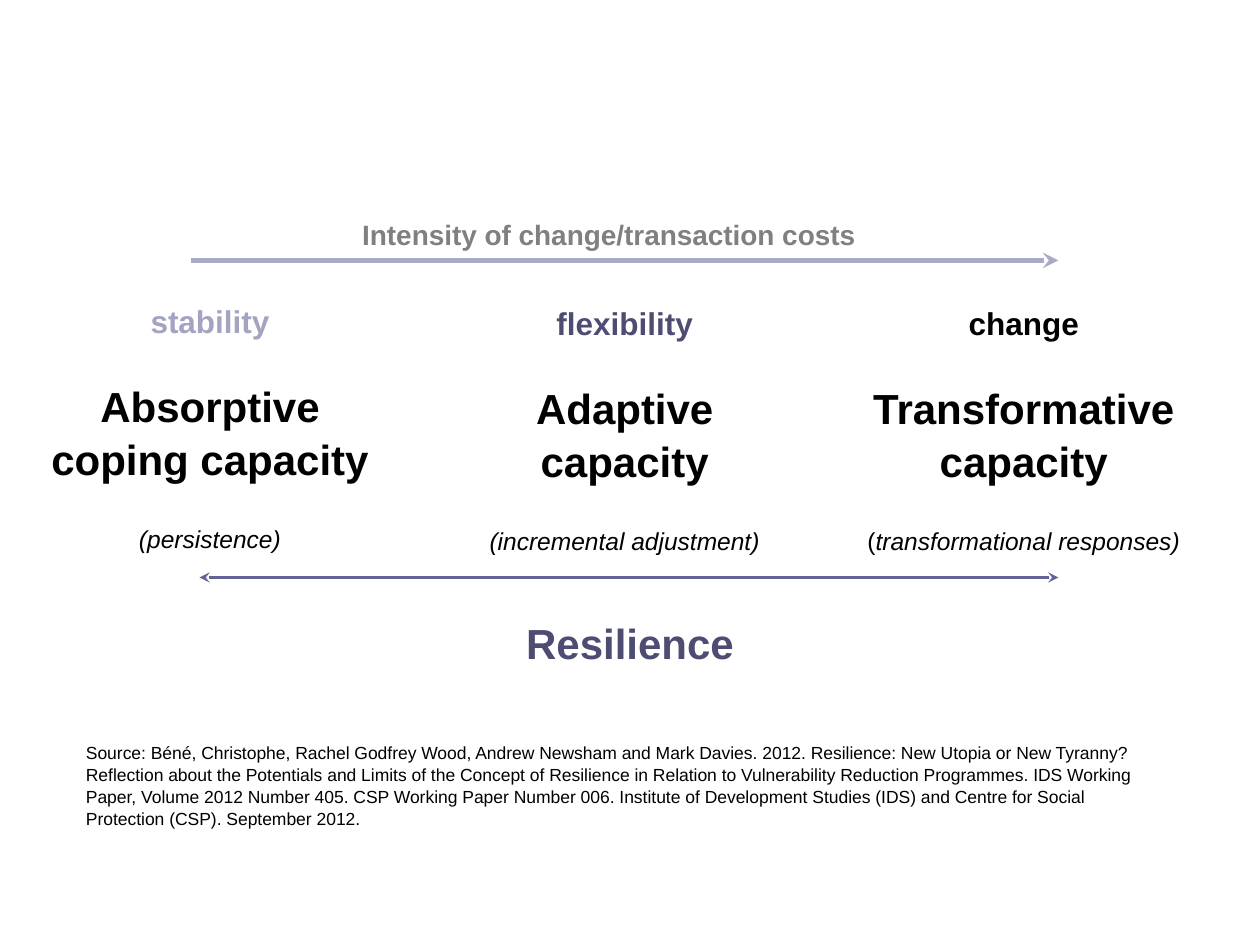
"""Build the resilience capacities slide on a grid of 120 columns by 90 rows."""
from lxml.etree import SubElement as Sub
from pptx import Presentation as Deck
from pptx.dml.color import RGBColor as Rgb
from pptx.enum.shapes import MSO_CONNECTOR as Conn
from pptx.enum.text import MSO_AUTO_SIZE as Auto, PP_ALIGN as Align
from pptx.oxml.ns import qn
from pptx.util import Inches, Pt

BLACK, DARK, PALE = "000000", "4D4D73", "A3A3C2"


def hue(code):
    """Turn a hex string into a colour."""
    return Rgb.from_string(code)


class Page:
    """Hold the style and the current slide."""

    font, lead, gap = "Arial", 1.05, 22

    def __init__(self, deck):
        """Add a blank slide and size the grid cell."""
        self.slide = deck.slides.add_slide(deck.slide_layouts[6])
        self.cell = deck.slide_width / 120

    def span(self, *units):
        """Turn grid units into lengths."""
        return [round(unit * self.cell) for unit in units]

    def run(self, para, words, size, tint=BLACK, bold=False, slant=False):
        """Add one styled run."""
        run = para.add_run()
        run.text = words
        font = run.font
        font.name, font.size = self.font, Pt(size)
        font.bold, font.italic = bold, slant
        font.color.rgb = hue(tint)

    def text(self, box, paras, align=Align.CENTER):
        """Add a text box; each paragraph is a list of runs."""
        frame = self.slide.shapes.add_textbox(*self.span(*box)).text_frame
        frame.word_wrap = True
        frame.auto_size = Auto.SHAPE_TO_FIT_TEXT
        for spot, runs in enumerate(paras):
            para = frame.add_paragraph() if spot else frame.paragraphs[0]
            para.alignment, para.line_spacing = align, self.lead
            para.space_before = Pt(self.gap if spot else 0)
            for run in runs:
                self.run(para, *run)

    def arrow(self, left, right, row, tint, width, ends):
        """Add a level line with stealth heads at the given ends."""
        line = self.slide.shapes.add_connector(
            Conn.STRAIGHT, *self.span(left, row, right, row))
        line.line.color.rgb = hue(tint)
        line.line.width = Pt(width)
        for end in ends:
            Sub(line.line._get_or_add_ln(), qn(f"a:{end}"), type="stealth")
        Sub(line._element.spPr, qn("a:effectLst"))


def main():
    """Draw the slide and save it."""
    deck = Deck()
    deck.slide_width, deck.slide_height = Inches(10), Inches(7.5)
    page = Page(deck)
    stages = [
        ((3, 28, 34, 25.4), "stability", PALE, "Absorptive coping capacity",
         [("(persistence)", 14, BLACK, False, True)]),
        ((44, 28.2, 31, 24.6), "flexibility", DARK, "Adaptive capacity",
         [("(incremental adjustment)", 14, BLACK, False, True)]),
        ((81, 28.2, 33, 24.6), "change", BLACK, "Transformative capacity",
         [("(", 14), ("transformational responses)", 14, BLACK, False, True)]),
    ]
    for box, trait, tint, name, note in stages:
        page.text(box, [[(trait, 18, tint, True)], [(name, 24, BLACK, True)], note])
    page.arrow(18.2, 100.8, 24.8, "A9A9CA", 3, ["tailEnd"])
    page.text((32, 20, 52, 4.4),
              [[("Intensity of change/transaction costs", 16, "808080", True)]])
    page.arrow(19, 100.8, 55, "636397", 1.5, ["headEnd", "tailEnd"])
    page.text((43, 58, 34, 6), [[("Resilience", 24, DARK, True)]])
    source = (
        "Source: Béné, Christophe, Rachel Godfrey Wood, Andrew Newsham and Mark "
        "Davies. 2012. Resilience: New Utopia or New Tyranny? Reflection about the "
        "Potentials and Limits of the Concept of Resilience in Relation to "
        "Vulnerability Reduction Programmes. IDS Working Paper, Volume 2012 Number "
        "405. CSP Working Paper Number 006. Institute of Development Studies (IDS) "
        "and Centre for Social Protection (CSP). September 2012.")
    page.text((7, 70, 104, 9.2), [[(source, 10)]], Align.LEFT)
    deck.save("out.pptx")


if __name__ == "__main__":
    main()
